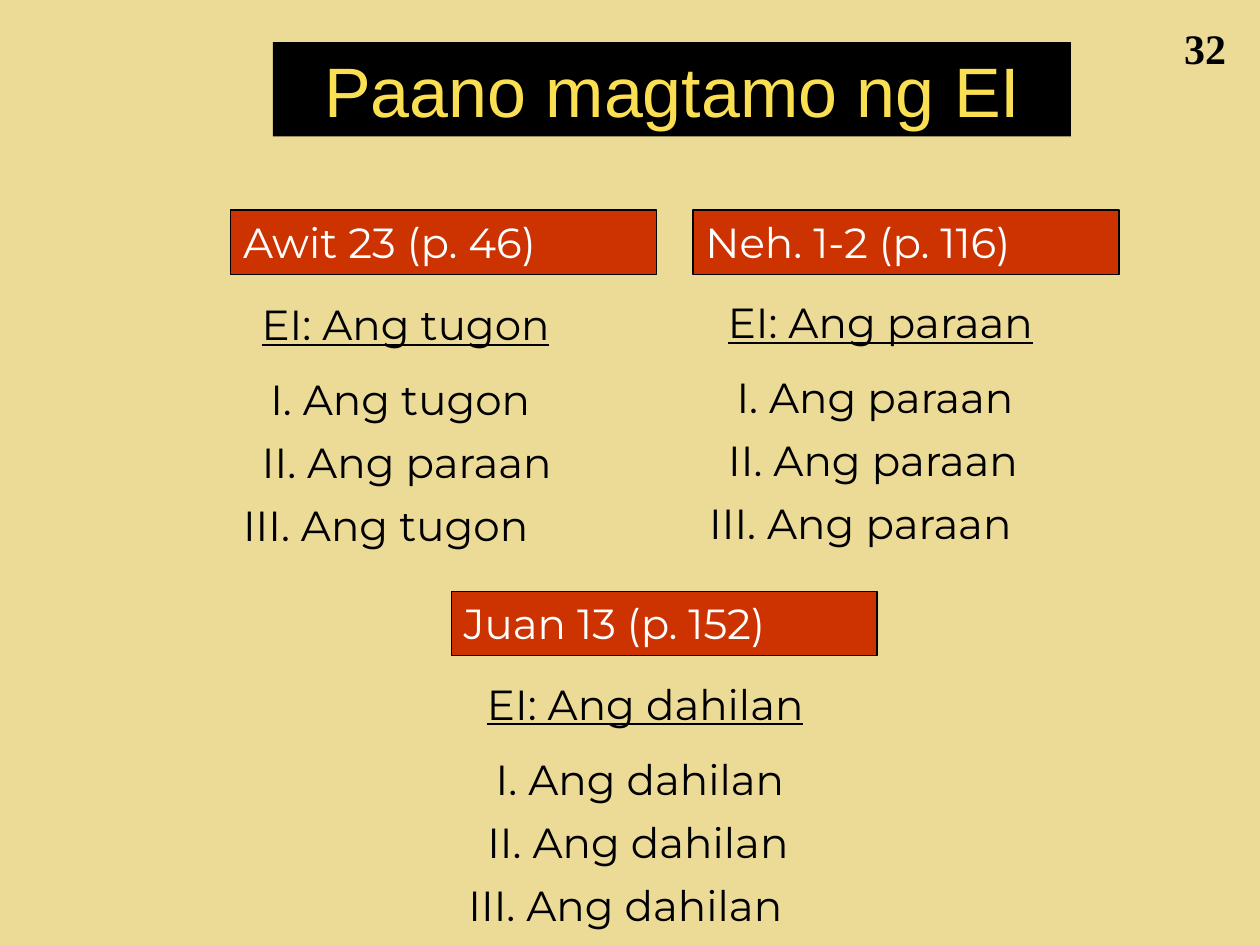
from dataclasses import dataclass

from pptx import Presentation
from pptx import util as u
from pptx.dml.color import RGBColor
from pptx.enum import shapes, text


@dataclass(frozen=True)
class Theme:
    background: str = "ECDB96"
    title_fill: str = "000000"
    title_text: str = "FBDF53"
    heading_fill: str = "CC3300"
    heading_text: str = "FFFFFF"
    ink: str = "000000"
    title_font: str = "Arial"
    body_font: str = "Montserrat"
    number_font: str = "Times New Roman"
    title_size: float = 40
    body_size: float = 24


THEME = Theme()
LINE_HEIGHT = 36
HEADING_SIZE = (243.4, 36.7)
# Offsets of the main idea and points I, II, III from the outline's corner
LINE_OFFSETS = [(10.6, 0), (15.6, 43), (10.8, 79), (0, 115)]

# Heading, heading corner, outline corner, lines with their box widths
PASSAGES = [
    ("Awit 23 (p. 46)", (131.8, 120), (131.8, 167.2),
     [("EI: Ang tugon", 192), ("I. Ang tugon", 175),
      ("II. Ang paraan", 201), ("III. Ang tugon", 194)]),
    ("Neh. 1-2 (p. 116)", (396, 120), (398.2, 166),
     [("EI: Ang paraan", 209), ("I. Ang paraan", 191.5),
      ("II. Ang paraan", 201), ("III. Ang paraan", 210)]),
    ("Juan 13 (p. 152)", (257.8, 337.8), (260.6, 384),
     [("EI: Ang dahilan", 214), ("I. Ang dahilan", 196.5),
      ("II. Ang dahilan", 206), ("III. Ang dahilan", 215)]),
]


def write(shape, words, font_name, size, color, align=text.PP_ALIGN.LEFT,
          bold=False, underline=False):
    shape.text_frame.text = words
    paragraph = shape.text_frame.paragraphs[0]
    paragraph.alignment = align
    font = paragraph.runs[0].font
    font.name = font_name
    font.size = u.Pt(size)
    font.bold = bold
    font.underline = underline
    font.color.rgb = RGBColor.from_string(color)


def add_panel(slide, left, top, width, height, fill):
    panel = slide.shapes.add_shape(shapes.MSO_SHAPE.RECTANGLE, u.Pt(left),
                                   u.Pt(top), u.Pt(width), u.Pt(height))
    panel.shadow.inherit = False
    panel.fill.solid()
    panel.fill.fore_color.rgb = RGBColor.from_string(fill)
    panel.line.fill.background()
    panel.text_frame.word_wrap = True
    return panel


def add_title(slide, words):
    title = add_panel(slide, 156, 24, 456, 54, THEME.title_fill)
    title.text_frame.vertical_anchor = text.MSO_ANCHOR.MIDDLE
    write(title, words, THEME.title_font, THEME.title_size, THEME.title_text,
          align=text.PP_ALIGN.CENTER)


def add_heading(slide, words, left, top):
    heading = add_panel(slide, left, top, *HEADING_SIZE, THEME.heading_fill)
    heading.line.color.rgb = RGBColor.from_string(THEME.ink)
    heading.line.width = u.Pt(0.75)
    heading.text_frame.vertical_anchor = text.MSO_ANCHOR.TOP
    heading.text_frame.auto_size = text.MSO_AUTO_SIZE.SHAPE_TO_FIT_TEXT
    write(heading, words, THEME.body_font, THEME.body_size, THEME.heading_text)


def add_label(slide, words, left, top, width, font_name=THEME.body_font, **style):
    label = slide.shapes.add_textbox(u.Pt(left), u.Pt(top), u.Pt(width),
                                     u.Pt(LINE_HEIGHT))
    label.text_frame.word_wrap = False
    label.text_frame.auto_size = text.MSO_AUTO_SIZE.SHAPE_TO_FIT_TEXT
    write(label, words, font_name, THEME.body_size, THEME.ink, **style)


def add_outline(slide, left, top, lines):
    for index, ((words, width), (dx, dy)) in enumerate(zip(lines, LINE_OFFSETS)):
        add_label(slide, words, left + dx, top + dy, width, underline=index == 0)


def main():
    presentation = Presentation()
    presentation.slide_width = u.Pt(720)
    presentation.slide_height = u.Pt(540)
    slide = presentation.slides.add_slide(presentation.slide_layouts[6])
    slide.background.fill.solid()
    slide.background.fill.fore_color.rgb = RGBColor.from_string(THEME.background)

    # Title and page number
    add_title(slide, "Paano magtamo ng EI")
    add_label(slide, "32", 669.6, 9.4, 38.2, THEME.number_font, bold=True)

    # Passages with their outlines
    for heading, heading_corner, outline_corner, lines in PASSAGES:
        add_heading(slide, heading, *heading_corner)
        add_outline(slide, *outline_corner, lines)

    presentation.save("out.pptx")


if __name__ == "__main__":
    main()
